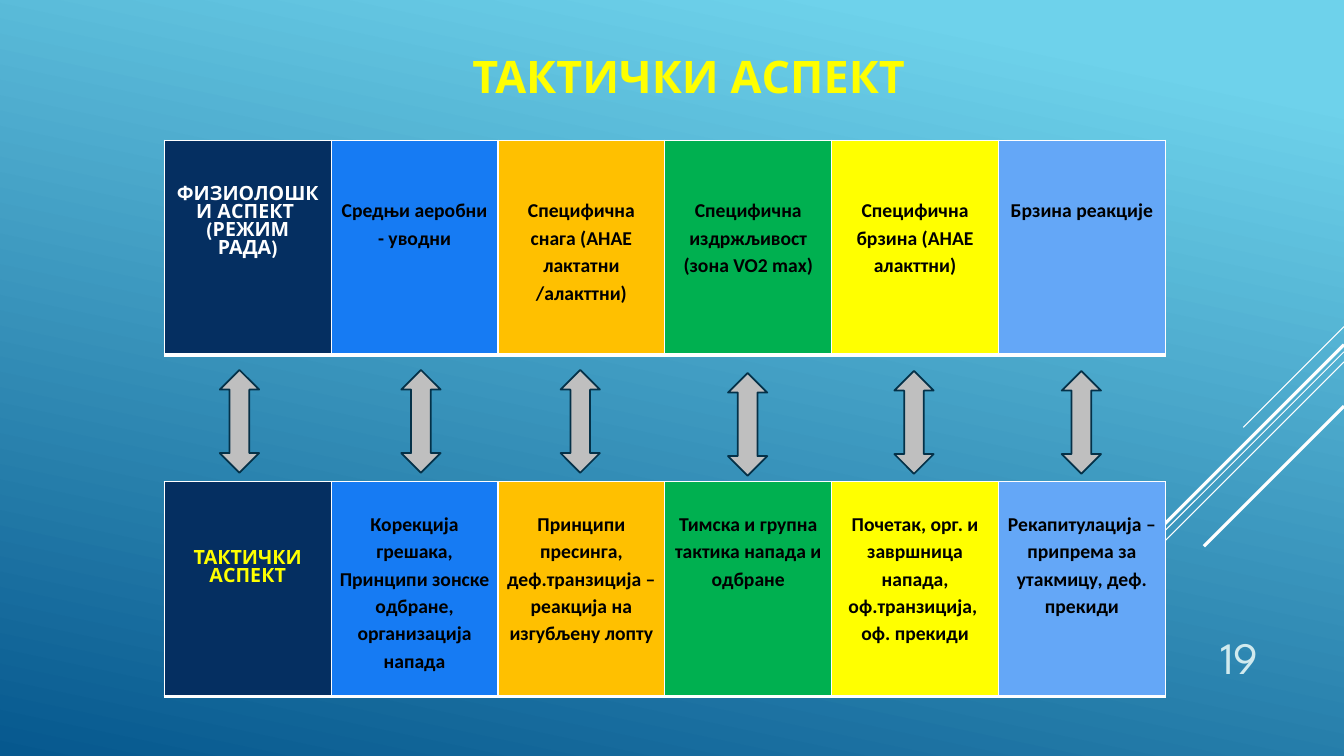
import pptx
import pptx.dml.color
import pptx.enum.shapes
import pptx.enum.text
import pptx.oxml
import pptx.oxml.ns
import pptx.util
from lxml import etree
from dataclasses import dataclass

Inches = pptx.util.Inches
Pt = pptx.util.Pt
RGB = pptx.dml.color.RGBColor.from_string
ALIGN = pptx.enum.text.PP_ALIGN
ANCHOR = pptx.enum.text.MSO_ANCHOR
qn = pptx.oxml.ns.qn


@dataclass(frozen=True)
class Theme:
    head_font: str = "League Spartan"
    body_font: str = "Calibri"
    title_size: int = 32
    cell_size: int = 14
    white: str = "FFFFFF"
    black: str = "000000"
    yellow: str = "FFFF00"
    number: str = "D1EAEE"
    sky: str = "6ED2EB"
    deep: str = "06588E"
    arrow: str = "BFBFBF"
    arrow_line: str = "043148"
    columns: tuple = ("052F61", "167BF3", "FFC000", "00B050", "FFFF00", "64A7F7")


THEME = Theme()

PHYSIOLOGY = [
    ["ФИЗИОЛОШКИ АСПЕКТ ", "(РЕЖИМ РАДА)"],
    ["Средњи аеробни - уводни"],
    ["Специфична снага (АНАЕ лактатни /алакттни)"],
    ["Специфична издржљивост", "(зона VO2 max)"],
    ["Специфична", "брзина (АНАЕ алакттни)"],
    ["Брзина реакције"],
]
TACTICS = [
    ["ТАКТИЧКИ АСПЕКТ"],
    ["Корекција грешака,", "Принципи зонске одбране, организација напада"],
    ["Принципи пресинга, деф.транзиција – реакција на изгубљену лопту"],
    ["Тимска и групна тактика напада и одбране"],
    ["Почетак, орг. и завршница напада, оф.транзиција, ", "оф. прекиди"],
    ["Рекапитулација – припрема за утакмицу, деф. прекиди"],
]
ARROWS = [(2.18, 0), (3.98, 0), (5.56, 0), (7.22, 0.03), (8.87, 0.01), (10.53, 0.01)]
RAYS = [
    (3.24, 1, 0.75),
    (3.49, 3.26, 0.75),
    (3.59, 2.07, 0.75),
    (3.42, 1.91, 2.25),
    (4.03, 1.39, 2.25),
]


def write(tf, lines, font, size, color, bold, align, spacing=None):
    tf.word_wrap = True
    tf.text = "\n".join(lines)
    for p in tf.paragraphs:
        p.alignment = align
        if spacing:
            p.line_spacing = spacing
        for r in p.runs:
            r.font.name = font
            r.font.size = Pt(size)
            r.font.bold = bold
            r.font.color.rgb = RGB(color)


def add_background(s):
    fill = s.background.fill
    fill.gradient()
    fill.gradient_angle = 258
    stops = [(0.1, THEME.sky), (1, THEME.deep)]
    for stop, (position, color) in zip(fill.gradient_stops, stops):
        stop.position = position
        stop.color.rgb = RGB(color)


def add_rays(s, right):
    for top, run, width in RAYS:
        line = s.shapes.add_connector(
            pptx.enum.shapes.MSO_CONNECTOR.STRAIGHT,
            Inches(right), Inches(top), Inches(right - run), Inches(top + run))
        line.line.color.rgb = RGB(THEME.white)
        line.line.width = Pt(width)
        etree.SubElement(line._element.spPr, qn("a:effectLst"))


def add_title(s, x, y, w, h):
    sp = s.shapes.title
    sp.left, sp.top, sp.width, sp.height = map(Inches, (x, y, w, h))
    sp.text_frame.vertical_anchor = ANCHOR.MIDDLE
    write(sp.text_frame, ["ТАКТИЧКИ АСПЕКТ "], THEME.head_font, THEME.title_size,
          THEME.yellow, True, ALIGN.CENTER)


def add_number(s, x, y, w, h):
    sp = s.shapes.add_textbox(*map(Inches, (x, y, w, h)))
    sp.text_frame.vertical_anchor = ANCHOR.BOTTOM
    write(sp.text_frame, ["19"], THEME.head_font, THEME.title_size,
          THEME.number, False, ALIGN.RIGHT)


def add_borders(cell):
    tcPr = cell._tc.get_or_add_tcPr()
    for side, width in (("L", 1), ("R", 1), ("T", 1), ("B", 3)):
        ln = etree.SubElement(tcPr, qn(f"a:ln{side}"), w=str(Pt(width)))
        fill = etree.SubElement(ln, qn("a:solidFill"))
        etree.SubElement(fill, qn("a:srgbClr"), val=THEME.white)


def add_aspect_table(s, x, y, w, h, texts, label_color, label_top, body_top):
    frame = s.shapes.add_table(1, len(texts), *map(Inches, (x, y, w, h)))
    for i, (lines, color) in enumerate(zip(texts, THEME.columns)):
        cell = frame.table.cell(0, i)
        add_borders(cell)
        cell.fill.solid()
        cell.fill.fore_color.rgb = RGB(color)
        cell.vertical_anchor = ANCHOR.TOP
        cell.margin_left = cell.margin_right = Inches(0.07 if i else 0.1)
        cell.margin_top = Inches(body_top if i else label_top)
        cell.margin_bottom = 0
        write(cell.text_frame, lines,
              THEME.body_font if i else THEME.head_font, THEME.cell_size,
              THEME.black if i else label_color, True, ALIGN.CENTER,
              1.15 if i else None)


def add_arrows(s, y, w, h):
    for x, drop in ARROWS:
        sp = s.shapes.add_shape(pptx.enum.shapes.MSO_SHAPE.UP_DOWN_ARROW,
                                *map(Inches, (x, y + drop, w, h)))
        sp.shadow.inherit = False
        sp.fill.solid()
        sp.fill.fore_color.rgb = RGB(THEME.arrow)
        sp.line.color.rgb = RGB(THEME.arrow_line)
        sp.line.width = Pt(1.25)


def main():
    prs = pptx.Presentation()
    prs.slide_width, prs.slide_height = Inches(13.33), Inches(7.5)
    s = prs.slides.add_slide(prs.slide_layouts[5])
    add_background(s)
    add_rays(s, 13.33)
    add_number(s, 11.33, 6.1, 1.25, 0.73)
    add_title(s, 2.02, 0.44, 9.74, 0.62)
    add_aspect_table(s, 1.63, 1.39, 9.93, 2.13, PHYSIOLOGY, THEME.white, 0.46, 0.55)
    add_aspect_table(s, 1.63, 4.78, 9.93, 2.13, TACTICS, THEME.yellow, 0.68, 0.27)
    add_arrows(s, 3.67, 0.39, 1.02)
    prs.save("out.pptx")


if __name__ == "__main__":
    main()
